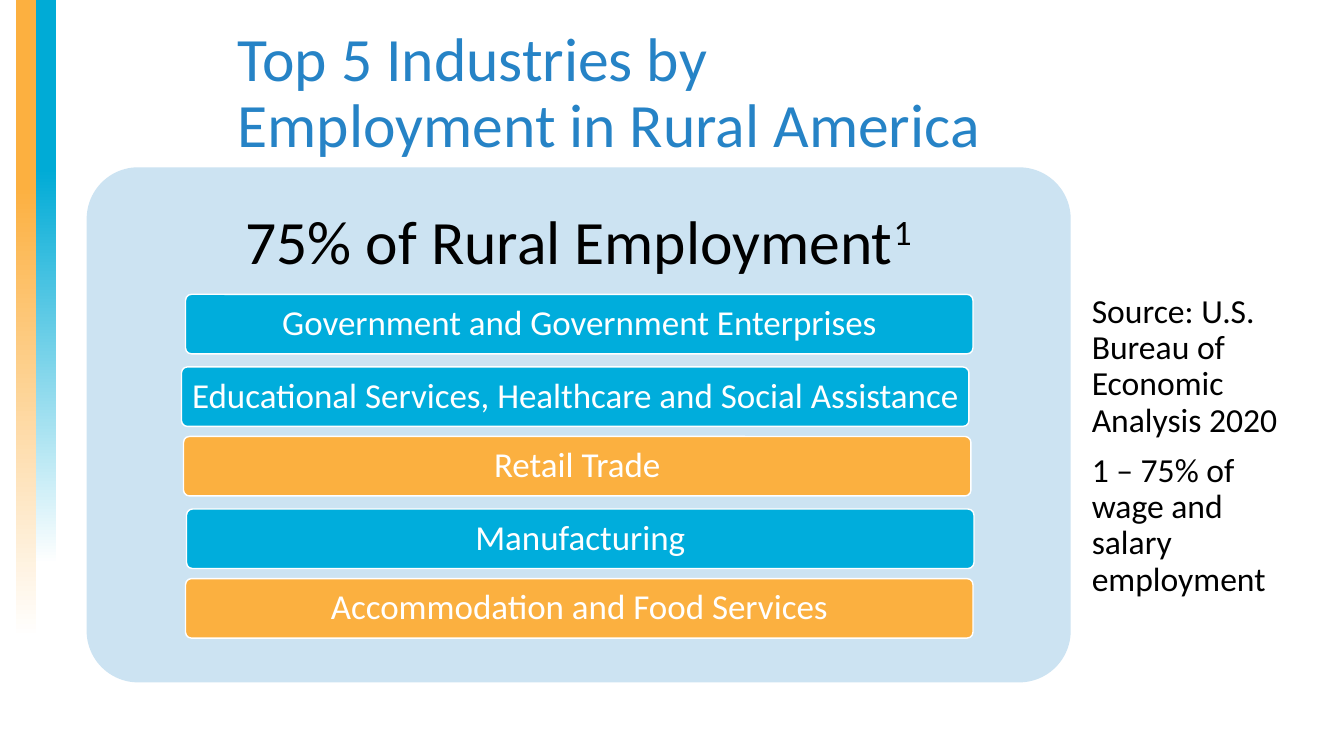
from pptx import Presentation
from pptx.dml import color
from pptx.enum import shapes, text
from pptx.util import Inches, Pt

BLUE, GOLD, WHITE, BLACK = "00ADDC", "FBB040", "FFFFFF", "000000"


def rgb(code):
    return color.RGBColor.from_string(code)


def write(frame, paras, size=24, ink=BLACK, align="LEFT", anchor="TOP", inset=(0.1, 0.05), gap=0):
    frame.word_wrap = True
    frame.vertical_anchor = text.MSO_ANCHOR[anchor]
    frame.margin_left = frame.margin_right = Inches(inset[0])
    frame.margin_top = frame.margin_bottom = Inches(inset[1])
    for i, words in enumerate(paras):
        para = frame.paragraphs[0] if i == 0 else frame.add_paragraph()
        para.alignment = text.PP_ALIGN[align]
        para.line_spacing = 0.9
        para.space_before = Pt(gap if i else 0)
        base, _, note = words.partition("^")
        for part, lift in ((base, 0), (note, 30000)):
            if part:
                run = para.add_run()
                run.text = part
                run.font.name = "Calibri"
                run.font.size = Pt(size)
                run.font.color.rgb = rgb(ink)
                if lift:
                    run.font._element.set("baseline", str(lift))


class Deck:
    def __init__(self):
        self.show = Presentation()
        self.show.slide_width = Inches(13.33)
        self.show.slide_height = Inches(7.5)
        self.slide = self.show.slides.add_slide(self.show.slide_layouts[6])

    def shape(self, kind, box):
        item = self.slide.shapes.add_shape(kind, *map(Inches, box))
        item.shadow.inherit = False
        item.line.fill.background()
        return item

    def stripe(self, box, hue, start):
        item = self.shape(shapes.MSO_SHAPE.RECTANGLE, box)
        item.fill.gradient()
        item.fill.gradient_angle = 270
        for stop, place, code in zip(item.fill.gradient_stops, (start, 1), (hue, WHITE)):
            stop.position = place
            stop.color.rgb = rgb(code)

    def panel(self, box, hue, edge=None):
        item = self.shape(shapes.MSO_SHAPE.ROUNDED_RECTANGLE, box)
        item.adjustments[0] = 0.1
        item.fill.solid()
        item.fill.fore_color.rgb = rgb(hue)
        if edge:
            item.line.color.rgb = rgb(edge)
            item.line.width = Pt(1)
        return item

    def label(self, box, *paras, **style):
        item = self.slide.shapes.add_textbox(*map(Inches, box))
        write(item.text_frame, paras, **style)

    def bar(self, left, top, words, hue):
        item = self.panel((left, top, 7.81, 0.59), hue, WHITE)
        write(item.text_frame, [words], size=25, ink=WHITE, align="CENTER",
              anchor="MIDDLE", inset=(0.07, 0.05))


def main():
    deck = Deck()
    deck.stripe((0.16, 0, 0.2, 6.33), "FCB040", 0.29)
    deck.stripe((0.36, 0, 0.2, 5.6), "00ABD6", 0.3)
    deck.label((2.26, 0.23, 7.57, 1.45), "Top 5 Industries by Employment in Rural America",
               size=44, ink="2683C6")
    deck.panel((0.86, 1.66, 9.76, 5.11), "CCE3F2")
    deck.label((0.86, 1.66, 9.76, 1.53), "75% of Rural Employment^1",
               size=44, align="CENTER", anchor="MIDDLE", inset=(0.18, 0.18))
    for left, top, words, hue in (
        (1.84, 2.92, "Government and Government Enterprises", BLUE),
        (1.8, 3.64, "Educational Services, Healthcare and Social Assistance", BLUE),
        (1.82, 4.33, "Retail Trade", GOLD),
        (1.85, 5.05, "Manufacturing", BLUE),
        (1.84, 5.74, "Accommodation and Food Services", GOLD),
    ):
        deck.bar(left, top, words, hue)
    deck.label((10.73, 2.87, 2.08, 3.4), "Source: U.S. Bureau of Economic Analysis 2020",
               "1 – 75% of wage and salary employment", gap=10)
    deck.show.save("out.pptx")


if __name__ == "__main__":
    main()
